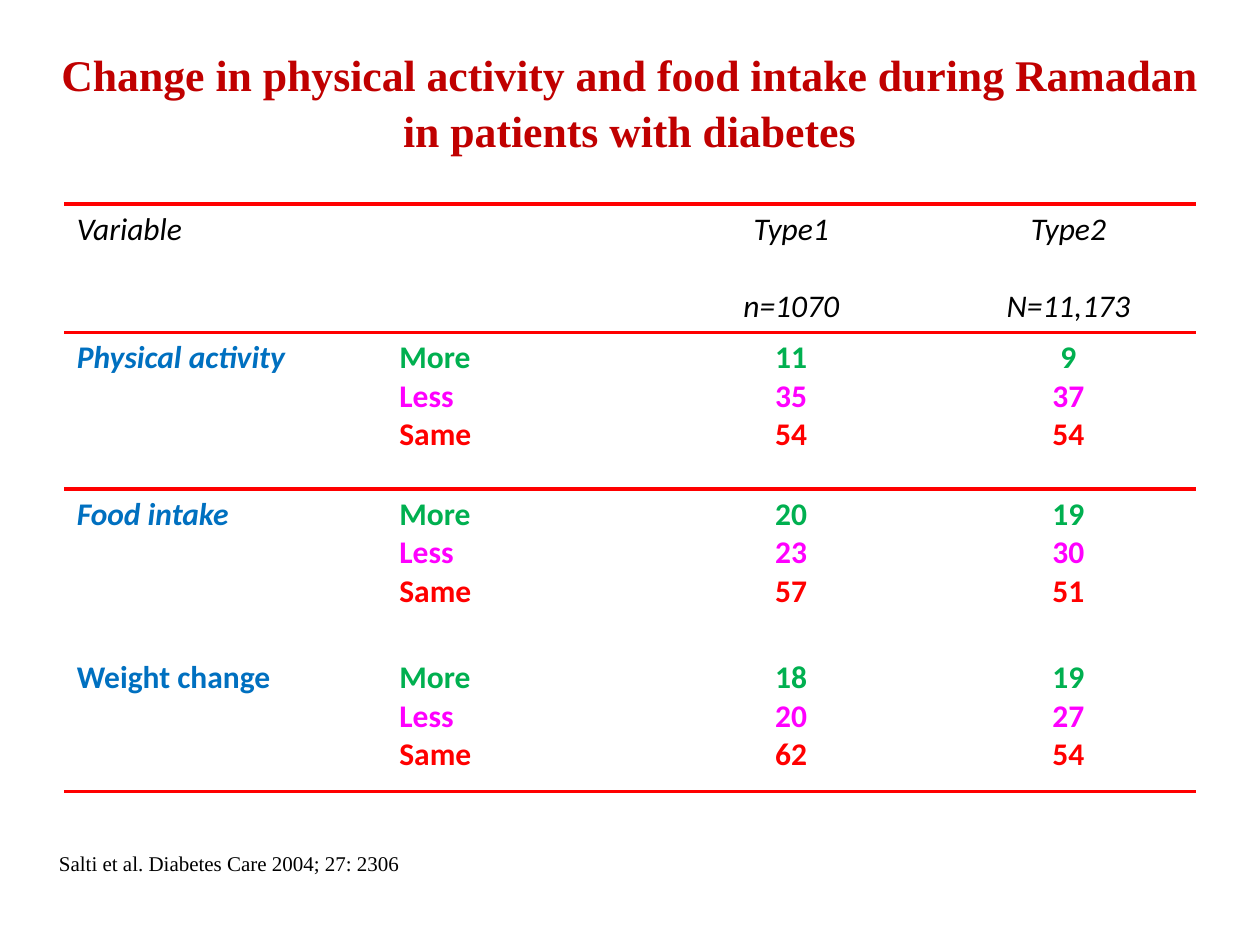
from pptx import Presentation, util as u
from pptx.dml.color import RGBColor
from pptx.enum import text
from pptx.oxml import parse_xml
from pptx.oxml.ns import nsdecls, qn

TITLE = "Change in physical activity and food intake during Ramadan in patients with diabetes"
CITATION = "Salti et al. Diabetes Care 2004; 27: 2306"
HEADER = [["Variable"], [], ["Type1", "n=1070"], ["Type2", "N=11,173"]]
ANSWERS = [("More", "00B050"), ("Less", "FF00FF"), ("Same", "FF0000")]
VARIABLES = [
    ("Physical activity", True, [11, 35, 54], [9, 37, 54]),
    ("Food intake", True, [20, 23, 57], [19, 30, 51]),
    ("Weight change", False, [18, 20, 62], [19, 27, 54]),
]
COLUMN_WIDTHS = [2.56, 2.02, 2.38, 2.02]
ROW_HEIGHTS = [1.02, 1.24, 1.3, 1.1]
RULE_COLOUR = "FF0000"
NO_GRID_STYLE = "{2D5ABB26-0587-4C30-8999-92F81FD0307C}"
ALIGN = text.PP_ALIGN


def write(frame, lines, colours=("000000",), size=18, font="Calibri", bold=False,
          italic=False, align=ALIGN.LEFT, spacing=None, gap=0):
    for index, line in enumerate(lines):
        paragraph = frame.paragraphs[0] if index == 0 else frame.add_paragraph()
        paragraph.alignment = align
        if spacing:
            paragraph.line_spacing = spacing
        if index:
            paragraph.space_before = u.Pt(gap)
        run = paragraph.add_run()
        run.text = str(line)
        run.font.name = font
        run.font.size = u.Pt(size)
        run.font.bold = bold
        run.font.italic = italic
        run.font.color.rgb = RGBColor.from_string(colours[index % len(colours)])


def rule(cell, edge):
    cell._tc.get_or_add_tcPr().append(parse_xml(
        f'<a:{edge} {nsdecls("a")} w="{u.Pt(2.25)}"><a:solidFill>'
        f'<a:srgbClr val="{RULE_COLOUR}"/></a:solidFill></a:{edge}>'))


def add_results(slide):
    frame = slide.shapes.add_table(
        len(ROW_HEIGHTS), len(COLUMN_WIDTHS), u.Inches(0.51), u.Inches(1.62),
        u.Inches(sum(COLUMN_WIDTHS)), u.Inches(sum(ROW_HEIGHTS)))
    results = frame.table
    results.first_row = results.horz_banding = False
    results._tbl.tblPr.find(qn("a:tableStyleId")).text = NO_GRID_STYLE
    for column, width in zip(results.columns, COLUMN_WIDTHS):
        column.width = u.Inches(width)
    for row, height in zip(results.rows, ROW_HEIGHTS):
        row.height = u.Inches(height)

    alignments = [ALIGN.LEFT, ALIGN.LEFT, ALIGN.CENTER, ALIGN.CENTER]
    for c, (heading, align) in enumerate(zip(HEADER, alignments)):
        write(results.cell(0, c).text_frame, heading, italic=True, align=align, gap=22)

    answers, colours = zip(*ANSWERS)
    for r, (variable, italic, type1, type2) in enumerate(VARIABLES, 1):
        write(results.cell(r, 0).text_frame, [variable], ["0070C0"], bold=True, italic=italic)
        for c, values in enumerate([answers, type1, type2], 1):
            write(results.cell(r, c).text_frame, values, colours, bold=True,
                  align=alignments[c])

    last = len(VARIABLES)
    for r, row in enumerate(results.rows):
        for cell in row.cells:
            if r in (0, 1):
                rule(cell, "lnT")
            if r in (0, last):
                rule(cell, "lnB")
            cell.fill.background()


def main():
    deck = Presentation()
    deck.slide_width, deck.slide_height = u.Inches(10), u.Inches(7.5)
    slide = deck.slides.add_slide(deck.slide_layouts[5])

    title = slide.shapes.title
    title.left, title.top = u.Inches(0.33), u.Inches(0.17)
    title.width, title.height = u.Inches(9.33), u.Inches(1.25)
    title.text_frame.vertical_anchor = text.MSO_ANCHOR.MIDDLE
    title.text_frame.auto_size = text.MSO_AUTO_SIZE.NONE
    write(title.text_frame, [TITLE], ["C00000"], size=25, font="Times New Roman",
          bold=True, align=ALIGN.CENTER, spacing=1.06)

    add_results(slide)

    citation = slide.shapes.add_textbox(
        u.Inches(0.37), u.Inches(6.6), u.Inches(4.97), u.Inches(0.37)).text_frame
    citation.word_wrap = True
    citation.auto_size = text.MSO_AUTO_SIZE.SHAPE_TO_FIT_TEXT
    write(citation, [CITATION], size=12, font="Times New Roman",
          align=ALIGN.JUSTIFY, spacing=1.5)

    deck.save("out.pptx")


if __name__ == "__main__":
    main()
